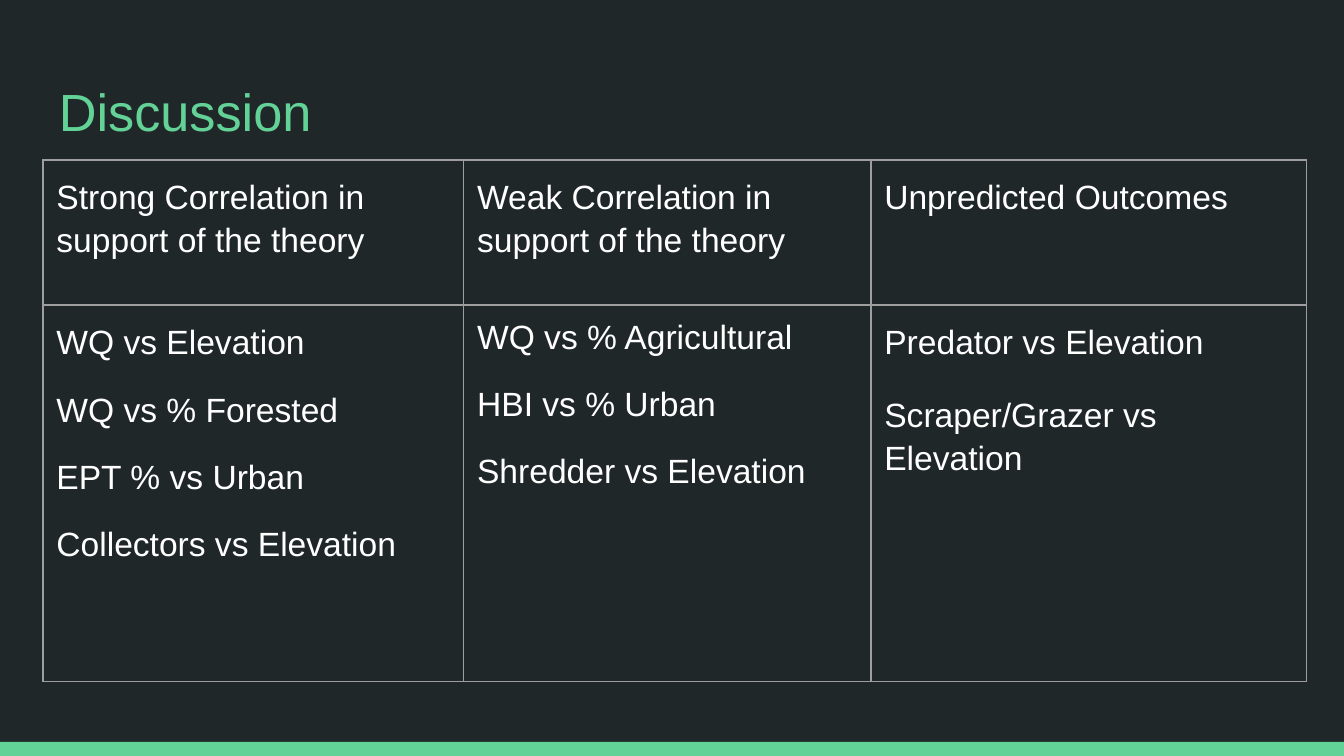
"""Build the Discussion slide: a title over a table of correlation outcomes."""
from lxml.etree import SubElement
from pptx import Presentation
from pptx.dml.color import RGBColor
from pptx.enum.shapes import MSO_SHAPE
from pptx.enum.text import MSO_ANCHOR
from pptx.oxml.ns import qn
from pptx.util import Inches, Pt

BACKGROUND = RGBColor(0x20, 0x27, 0x29)
GREEN = RGBColor(0x63, 0xD2, 0x97)
WHITE = RGBColor(0xFF, 0xFF, 0xFF)
GREY = RGBColor(0x9E, 0x9E, 0x9E)

COLUMN_WIDTHS = [3.13, 3.03, 3.24]
ROW_HEIGHTS = [1.08, 2.8]
HEADINGS = [
    "Strong Correlation in support of the theory",
    "Weak Correlation in support of the theory",
    "Unpredicted Outcomes",
]
OUTCOMES = [
    ["WQ vs Elevation", "WQ vs % Forested", "EPT % vs Urban", "Collectors vs Elevation"],
    ["WQ vs % Agricultural", "HBI vs % Urban", "Shredder vs Elevation"],
    ["Predator vs Elevation", "Scraper/Grazer vs Elevation"],
]
LOOSE_LINES = [1, 0, 2]


def write(frame, lines, size=18, color=WHITE, after=16, loose=0):
    for index, line in enumerate(lines):
        para = frame.paragraphs[0] if index == 0 else frame.add_paragraph()
        para.space_after = Pt(after)
        para.line_spacing = 1.15 if index < loose else 1.0
        span = para.add_run()
        span.text = line
        span.font.name = "Arial"
        span.font.size = Pt(size)
        span.font.color.rgb = color


def outline(cell):
    properties = cell._tc.get_or_add_tcPr()
    for position, side in enumerate(["a:lnL", "a:lnR", "a:lnT", "a:lnB"]):
        line = SubElement(properties, qn(side), w=str(Pt(0.75)))
        fill = SubElement(line, qn("a:solidFill"))
        SubElement(fill, qn("a:srgbClr"), val=str(GREY))
        properties.insert(position, line)


deck = Presentation()
deck.slide_width = Inches(10)
deck.slide_height = Inches(10) * 9 // 16
page = deck.slides.add_slide(deck.slide_layouts[6])
page.background.fill.solid()
page.background.fill.fore_color.rgb = BACKGROUND

footer = page.shapes.add_shape(
    MSO_SHAPE.RECTANGLE, Inches(0), Inches(5.52), Inches(10), Inches(0.11)
)
footer.shadow.inherit = False
footer.fill.solid()
footer.fill.fore_color.rgb = GREEN
footer.line.fill.background()

table = page.shapes.add_table(
    2, 3, Inches(0.32), Inches(1.19), Inches(sum(COLUMN_WIDTHS)), Inches(sum(ROW_HEIGHTS))
).table
table.first_row = False
table.horz_banding = False
for row, height in zip(table.rows, ROW_HEIGHTS):
    row.height = Inches(height)
for number, width in enumerate(COLUMN_WIDTHS):
    table.columns[number].width = Inches(width)
    heading = table.cell(0, number)
    outcome = table.cell(1, number)
    write(heading.text_frame, [HEADINGS[number]], loose=1)
    write(outcome.text_frame, OUTCOMES[number], loose=LOOSE_LINES[number])
    for cell in (heading, outcome):
        cell.margin_left = cell.margin_right = Inches(0.1)
        cell.margin_top = cell.margin_bottom = Inches(0.1)
        cell.fill.background()
        outline(cell)

box = page.shapes.add_textbox(Inches(0.34), Inches(0.49), Inches(9.32), Inches(0.63))
title = box.text_frame
title.word_wrap = True
title.vertical_anchor = MSO_ANCHOR.TOP
title.margin_left = title.margin_right = Inches(0.1)
title.margin_top = title.margin_bottom = Inches(0.1)
write(title, ["Discussion"], size=28, color=GREEN, after=0)

deck.save("out.pptx")
